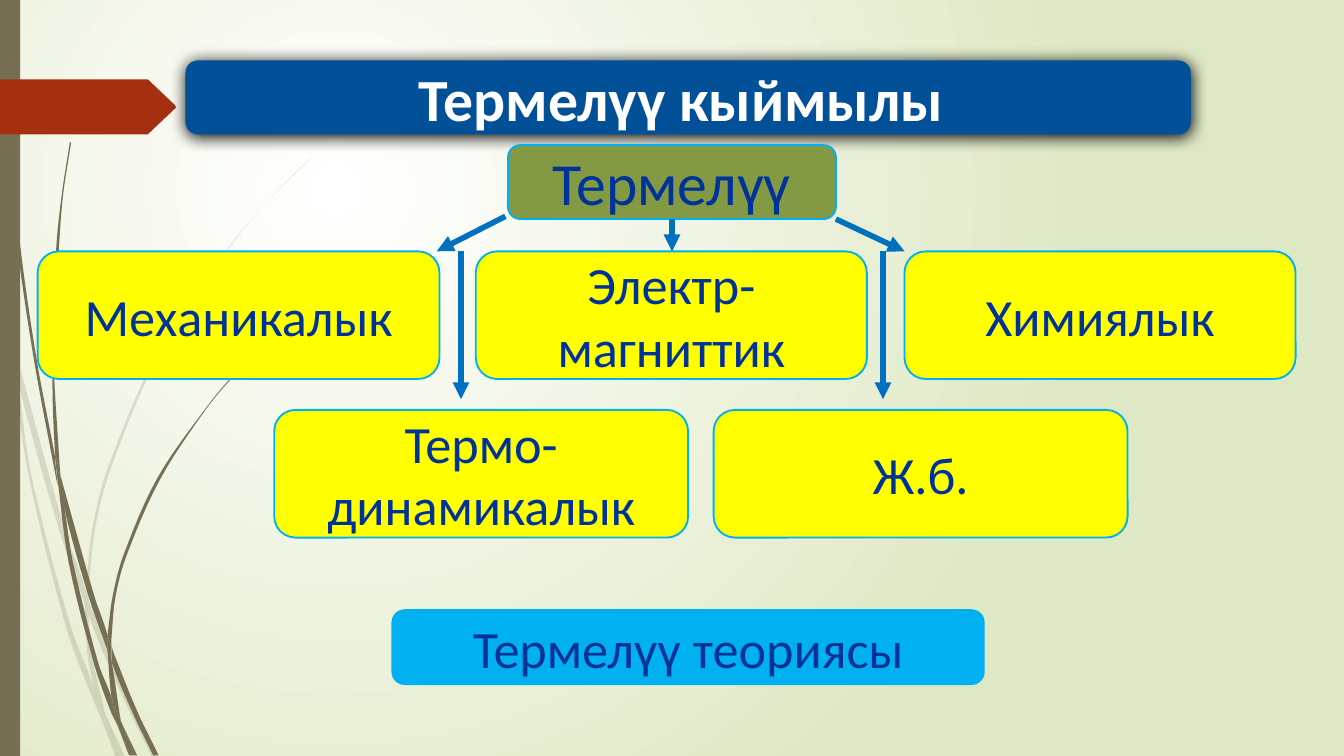
from dataclasses import dataclass
from math import dist

from lxml.etree import SubElement
from pptx import Presentation
from pptx.dml.color import RGBColor
from pptx.enum.shapes import MSO_CONNECTOR, MSO_SHAPE
from pptx.enum.text import MSO_ANCHOR, PP_ALIGN
from pptx.oxml import parse_xml
from pptx.oxml.ns import nsdecls, qn
from pptx.util import Inches, Pt


@dataclass(frozen=True)
class Theme:
    font: str = "Calibri"
    heading_size: int = 32
    label_size: int = 28
    glow: str = "FFFFFF"
    backdrop: str = "DFE8C4"
    grass: str = "766F54"
    marker: str = "A53010"
    title_fill: str = "025198"
    title_text: str = "FFFFFF"
    root_fill: str = "839944"
    kind_fill: str = "FFFF00"
    cyan: str = "00B0F0"
    text: str = "003399"
    arrow: str = "0070C0"


# Outlines of the grass blades, as x, y points in inches.
PALE_GRASS = [
    [(.08, 2.63), (.06, 2.41), (0, 2.11), (0, 2.24), (.08, 2.58)],
    [(.43, 3.91), (.63, 4.49), (.64, 4.4), (.47, 3.9), (.11, 2.59), (.13, 2.82)],
    [(.69, 4.55), (.66, 4.47), (.66, 4.58), (.92, 5.2), (1.13, 5.63), (1.16, 5.63),
     (.95, 5.19)],
    [(.89, 5.63), (.93, 5.63), (.79, 5.33)],
    [(.7, 5.12), (.52, 4.64), (.23, 3.52), (.13, 2.82), (.08, 2.63), (.21, 3.52),
     (.49, 4.66), (.69, 5.2), (.76, 5.36), (.74, 5.3)],
    [(.63, 4.49), (.65, 4.85), (.7, 5.12), (.72, 5.19), (.79, 5.33), (.78, 5.3),
     (.68, 4.84), (.66, 4.58), (.66, 4.56)],
    [(.66, 4.38), (.71, 3.92), (.83, 3.47), (1.2, 2.61), (1.71, 1.84), (2.01, 1.48),
     (2.34, 1.15), (2.17, 1.31), (2.01, 1.48), (1.71, 1.83), (1.18, 2.61),
     (.81, 3.46), (.69, 3.92), (.64, 4.38), (.64, 4.4), (.66, 4.47)],
    [(.76, 5.36), (.86, 5.63), (.89, 5.63)],
    [(.66, 4.56), (.66, 4.58), (.66, 4.47), (.64, 4.4), (.63, 4.49)],
    [(.72, 5.19), (.7, 5.12), (.74, 5.3), (.76, 5.36), (.89, 5.63), (.79, 5.33)],
]
DARK_GRASS = [
    [(.05, .82), (.12, 1.75), (.25, 2.66), (.42, 3.57), (.43, 3.61), (.41, 3.43),
     (.41, 3.4), (.27, 2.66), (.14, 1.74), (.06, .82), (.03, .36), (.03, 0),
     (.02, 0), (.03, .36)],
    [(.66, 4.44), (.8, 4.84), (.8, 4.73), (.7, 4.43), (.45, 3.54), (.48, 3.79)],
    [(.85, 4.87), (.83, 4.81), (.83, 4.92), (.99, 5.31), (1.14, 5.62), (1.18, 5.62),
     (1.02, 5.29)],
    [(.83, 5.19), (.73, 4.93), (.54, 4.17), (.48, 3.79), (.43, 3.58), (.51, 4.18),
     (.7, 4.94), (.83, 5.31), (.88, 5.41), (.87, 5.38)],
    [(.45, 3.54), (.44, 3.4), (.4, 2.62), (.44, 1.83), (.47, 1.45), (.53, 1.06),
     (.52, 1.06), (.46, 1.45), (.42, 1.83), (.39, 2.62), (.41, 3.37)],
    [(1, 5.62), (1.02, 5.62), (.91, 5.39)],
    [(.43, 3.58), (.48, 3.79), (.45, 3.54), (.41, 3.37), (.41, 3.4)],
    [(.83, 4.75), (.86, 4.44), (.94, 4.14), (1.19, 3.57), (1.53, 3.05), (1.73, 2.81),
     (1.96, 2.58), (1.95, 2.58), (1.73, 2.8), (1.53, 3.04), (1.17, 3.56),
     (.92, 4.13), (.84, 4.43), (.8, 4.73), (.83, 4.81)],
    [(.88, 5.41), (.96, 5.62), (.98, 5.62)],
    [(.8, 4.84), (.83, 5.19), (.87, 5.3), (.91, 5.39), (.9, 5.37), (.83, 4.92),
     (.81, 4.88)],
    [(.8, 4.84), (.81, 4.88), (.83, 4.92), (.83, 4.81), (.8, 4.73), (.8, 4.75)],
    [(.87, 5.3), (.83, 5.19), (.87, 5.38), (.88, 5.41), (.98, 5.62), (1, 5.62),
     (.91, 5.39)],
]
MARKER = [(0, .59), (1.1, .59), (1.11, .6), (1.3, .78), (1.31, .8), (1.3, .81),
          (1.11, .99), (1.1, 1), (0, 1)]


def direction(a, b):
    return (b[0] - a[0]) / dist(a, b), (b[1] - a[1]) / dist(a, b)


def rounded(points, steps=6):
    """Bend the long edges of a closed outline, keeping its sharp corners."""
    def tangent(i, edge):
        before, here, after = points[i - 1], points[i], points[(i + 1) % len(points)]
        arriving, leaving = direction(before, here), direction(here, after)
        bend = arriving[0] * leaving[0] + arriving[1] * leaving[1]
        return direction(before, after) if bend > 0.9 else edge

    curve = []
    for i, start in enumerate(points):
        j = (i + 1) % len(points)
        end, edge = points[j], direction(start, points[j])
        length = dist(start, end)
        leave, arrive = tangent(i, edge), tangent(j, edge)
        for t in (n / steps for n in range(steps if length > 0.2 else 1)):
            ease = t * t * (3 - 2 * t)
            curve.append(tuple(
                a + (b - a) * ease + length * t * (1 - t) * ((1 - t) * u - t * v)
                for a, b, u, v in zip(start, end, leave, arrive)))
    return curve


class SlideBuilder:
    def __init__(self, slide, theme):
        self.slide = slide
        self.theme = theme

    def backdrop(self):
        fill = self.slide.background.fill
        fill.gradient()
        for stop, color in zip(fill.gradient_stops, (self.theme.glow, self.theme.backdrop)):
            stop.color.rgb = RGBColor.from_string(color)
        gradient = self.slide.element.find(".//" + qn("a:gradFill"))
        gradient.replace(gradient.find(qn("a:lin")), parse_xml(
            f'<a:path {nsdecls("a")} path="circle">'
            '<a:fillToRect l="50000" t="50000" r="100000" b="100000"/></a:path>'))

    def paint(self, shape, fill, line=None):
        shape.shadow.inherit = False
        shape.fill.solid()
        shape.fill.fore_color.rgb = RGBColor.from_string(fill)
        if line:
            shape.line.color.rgb = RGBColor.from_string(line)
            shape.line.width = Pt(1)
        else:
            shape.line.fill.background()

    def outline(self, points, fill, shapes=None, opacity=100):
        start, *rest = [(Inches(x), Inches(y)) for x, y in points]
        builder = (shapes or self.slide.shapes).build_freeform(*start)
        builder.add_line_segments(rest, close=True)
        shape = builder.convert_to_shape()
        self.paint(shape, fill)
        if opacity < 100:
            color = shape._element.spPr.find(".//" + qn("a:srgbClr"))
            SubElement(color, qn("a:alpha"), val=str(opacity * 1000))

    def grass(self, blades, opacity=100):
        tuft = self.slide.shapes.add_group_shape()
        for blade in blades:
            self.outline(rounded(blade), self.theme.grass, tuft.shapes, opacity)

    def block(self, kind, box, fill, line=None):
        shape = self.slide.shapes.add_shape(kind, *map(Inches, box))
        self.paint(shape, fill, line)
        return shape

    def label(self, text, box, fill, size, line=None, color=None, bold=False):
        """Rounded box with centred text."""
        shape = self.block(MSO_SHAPE.ROUNDED_RECTANGLE, box, fill, line)
        frame = shape.text_frame
        frame.word_wrap = True
        frame.vertical_anchor = MSO_ANCHOR.MIDDLE
        paragraph = frame.paragraphs[0]
        paragraph.alignment = PP_ALIGN.CENTER
        run = paragraph.add_run()
        run.text = text
        run.font.name = self.theme.font
        run.font.size = Pt(size)
        run.font.bold = bold
        run.font.color.rgb = RGBColor.from_string(color or self.theme.text)
        return shape

    def cast_shadow(self, shape):
        effects = shape._element.spPr.find(qn("a:effectLst"))
        effects.append(parse_xml(
            f'<a:outerShdw {nsdecls("a")} blurRad="{Pt(8.5)}" dist="{Pt(1)}" '
            'dir="5400000" algn="ctr" rotWithShape="0"><a:srgbClr val="000000"/></a:outerShdw>'))

    def arrow(self, start, end):
        connector = self.slide.shapes.add_connector(
            MSO_CONNECTOR.STRAIGHT, *map(Inches, (*start, *end)))
        connector.line.color.rgb = RGBColor.from_string(self.theme.arrow)
        connector.line.width = Pt(3)
        SubElement(connector.line._get_or_add_ln(), qn("a:tailEnd"), type="triangle")
        SubElement(connector._element.spPr, qn("a:effectLst"))


def main():
    presentation = Presentation()
    presentation.slide_width = Inches(10)
    presentation.slide_height = Inches(10) * 9 // 16
    theme = Theme()
    page = SlideBuilder(presentation.slides.add_slide(presentation.slide_layouts[6]), theme)

    page.backdrop()
    page.grass(PALE_GRASS, opacity=20)
    page.grass(DARK_GRASS)
    page.block(MSO_SHAPE.RECTANGLE, (0, 0, 0.15, presentation.slide_height.inches), theme.grass)
    page.outline(MARKER, theme.marker)

    title = page.label("Термелүү кыймылы ", (1.38, 0.45, 7.48, 0.55), theme.title_fill,
                       theme.heading_size, color=theme.title_text, bold=True)
    page.cast_shadow(title)
    page.label("Термелүү", (3.78, 1.08, 2.44, 0.55), theme.root_fill,
               theme.heading_size, theme.cyan)

    top_row, bottom_row = 1.87, 3.05
    for kind, left, top, width in [
        ("Механикалык", 0.28, top_row, 2.99),
        ("Электр-магниттик", 3.54, top_row, 2.91),
        ("Химиялык", 6.73, top_row, 2.91),
        ("Термо-динамикалык", 2.04, bottom_row, 3.08),
        ("Ж.б.", 5.31, bottom_row, 3.08),
    ]:
        page.label(kind, (left, top, width, 0.95), theme.kind_fill,
                   theme.label_size, theme.cyan)
    page.label("Термелүү теориясы", (2.92, 4.54, 4.4, 0.55), theme.cyan,
               theme.label_size, theme.cyan)

    for start, end in [((5, 1.63), (5, top_row)),
                       ((6.22, 1.63), (6.73, top_row)),
                       ((3.76, 1.61), (3.25, top_row))]:
        page.arrow(start, end)
    for gap in (3.43, 6.57):
        page.arrow((gap, top_row), (gap, 2.97))

    presentation.save("out.pptx")


if __name__ == "__main__":
    main()
